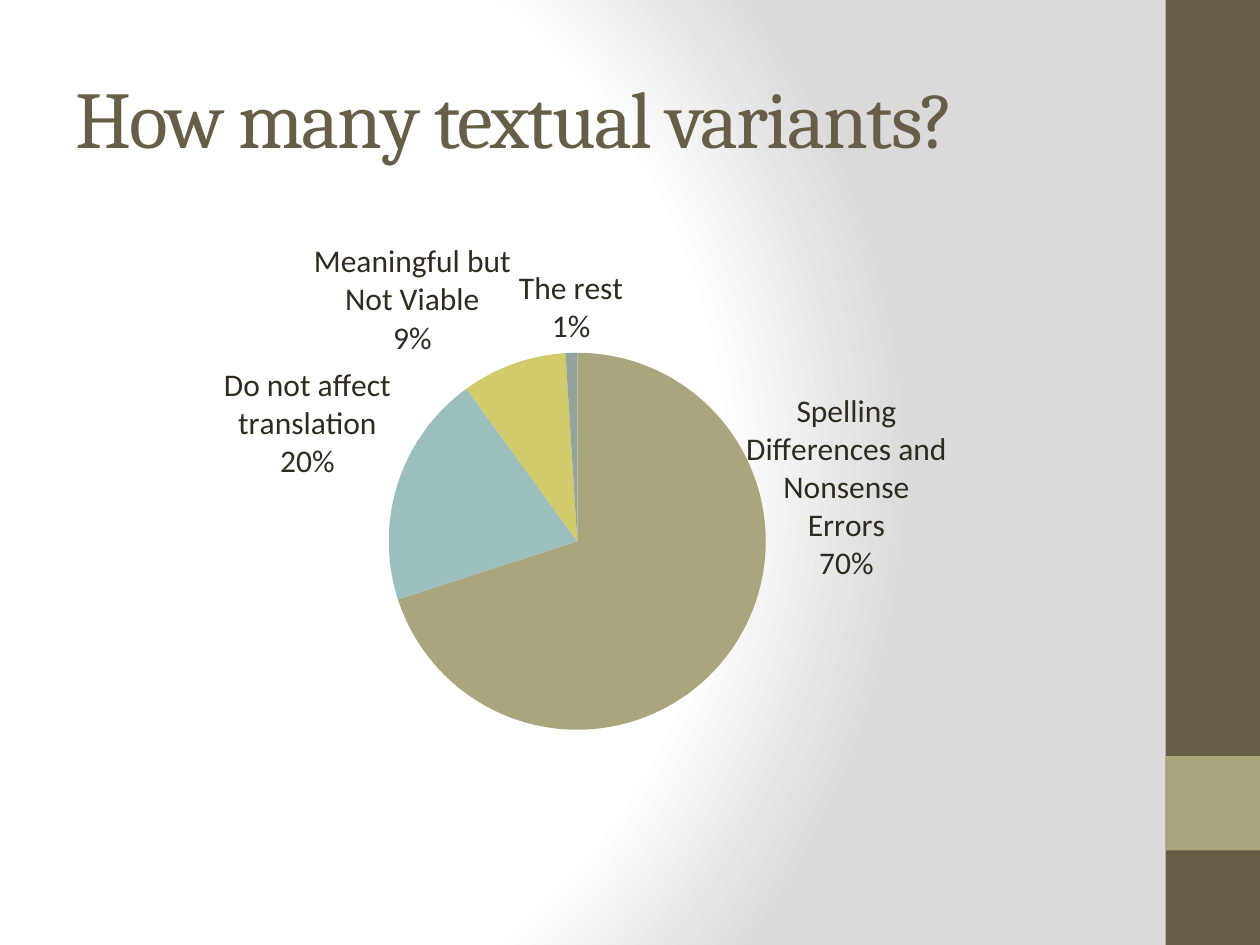
from lxml.etree import SubElement
from pptx import Presentation
from pptx.chart.data import CategoryChartData
from pptx.dml.color import RGBColor
from pptx.enum.chart import XL_CHART_TYPE, XL_LABEL_POSITION
from pptx.enum.shapes import MSO_SHAPE
from pptx.enum.text import MSO_ANCHOR
from pptx.oxml import parse_xml
from pptx.oxml.ns import nsdecls, qn
from pptx.util import Inches, Pt

COLORS = {
    "brown": "675E47", "olive": "A9A57C", "teal": "9CBEBD", "yellow": "D2CB6C",
    "sage": "95A39D", "ink": "2F2B20", "white": "FFFFFF", "grey": "DADADA",
}
VARIANTS = [
    ("Spelling Differences and Nonsense Errors", 70, "olive"),
    ("Do not affect translation", 20, "teal"),
    ("Meaningful but Not Viable", 9, "yellow"),
    ("The rest", 1, "sage"),
]


def color(name):
    return RGBColor.from_string(COLORS[name])


def add_layout(parent, index, **values):
    layout = parse_xml(f"<c:layout {nsdecls('c')}/>")
    manual = SubElement(layout, qn("c:manualLayout"))
    for key, value in values.items():
        SubElement(manual, qn(f"c:{key}")).set("val", str(value))
    parent.insert(index, layout)


prs = Presentation()
prs.slide_width, prs.slide_height = Inches(10), Inches(7.5)
unit = prs.slide_height // 10
slide = prs.slides.add_slide(prs.slide_layouts[6])

backdrop = slide.background.fill
backdrop.gradient()
gradient = slide.background._cSld.find(".//" + qn("a:gradFill"))
stops = "".join(
    f'<a:gs pos="{share * 1000}"><a:srgbClr val="{COLORS[name]}"/></a:gs>'
    for share, name in [(0, "white"), (75, "white"), (100, "grey")]
)
gradient.getparent().replace(gradient, parse_xml(
    f'<a:gradFill {nsdecls("a")} rotWithShape="1"><a:gsLst>{stops}</a:gsLst>'
    '<a:path path="circle"><a:fillToRect l="20000" t="50000" r="100000" b="50000"/>'
    "</a:path></a:gradFill>"
))

for row, rows, name in [(0, 10, "brown"), (8, 1, "olive")]:
    band = slide.shapes.add_shape(
        MSO_SHAPE.RECTANGLE, prs.slide_width - unit, row * unit, unit, rows * unit
    )
    band.shadow.inherit = False
    band.fill.solid()
    band.fill.fore_color.rgb = color(name)
    band.line.fill.background()

left, width = Inches(0.5), Inches(8.33)
title = slide.shapes.add_textbox(left, Inches(0.3), width, Inches(1.25)).text_frame
title.word_wrap = True
title.vertical_anchor = MSO_ANCHOR.MIDDLE
heading = title.paragraphs[0].add_run()
heading.text = "How many textual variants?"
for key, value in {"name": "Cambria", "size": Pt(46)}.items():
    setattr(heading.font, key, value)
heading.font.color.rgb = color("brown")
heading.font._element.set("spc", "-100")

shares = CategoryChartData()
shares.categories = [label for label, _, _ in VARIANTS]
shares.add_series("Series 1", [value for _, value, _ in VARIANTS])
pie = slide.shapes.add_chart(
    XL_CHART_TYPE.PIE, left, Inches(1.75), width, Inches(5.25), shares
).chart
pie.has_legend = pie.has_title = False
for key, value in {"name": "Calibri", "size": Pt(18)}.items():
    setattr(pie.font, key, value)
pie.font.color.rgb = color("ink")

plot = pie.plots[0]
plot.vary_by_categories = True
plot_area = pie._chartSpace.chart.plotArea
for existing in plot_area.findall(qn("c:layout")):
    plot_area.remove(existing)
add_layout(plot_area, 0, layoutTarget="inner", xMode="edge", yMode="edge",
           x=0.31, y=0.2, w=0.36, h=0.57)

series = plot.series[0]
for index, (_, _, name) in enumerate(VARIANTS):
    wedge = series.points[index].format.fill
    wedge.solid()
    wedge.fore_color.rgb = color(name)

labels = series.data_labels
for key, value in {
    "show_category_name": True, "show_percentage": True, "show_value": False,
    "show_legend_key": False, "position": XL_LABEL_POSITION.OUTSIDE_END,
}.items():
    setattr(labels, key, value)
separator = SubElement(labels._element, qn("c:separator"))
separator.text = "\n"
labels._element.find(qn("c:showBubbleSize")).addnext(separator)

series.points[0].data_label.position = XL_LABEL_POSITION.OUTSIDE_END
spelling = labels._element.find(qn("c:dLbl"))
add_layout(spelling, 1, x=0.01, y=-0.4)
for key, shown in {"showVal": 0, "showCatName": 1, "showPercent": 1, "showLegendKey": 0}.items():
    spelling.find(qn(f"c:{key}")).set("val", str(shown))
spelling_separator = SubElement(spelling, qn("c:separator"))
spelling_separator.text = "\n"
spelling.find(qn("c:showBubbleSize")).addnext(spelling_separator)

prs.save("out.pptx")
